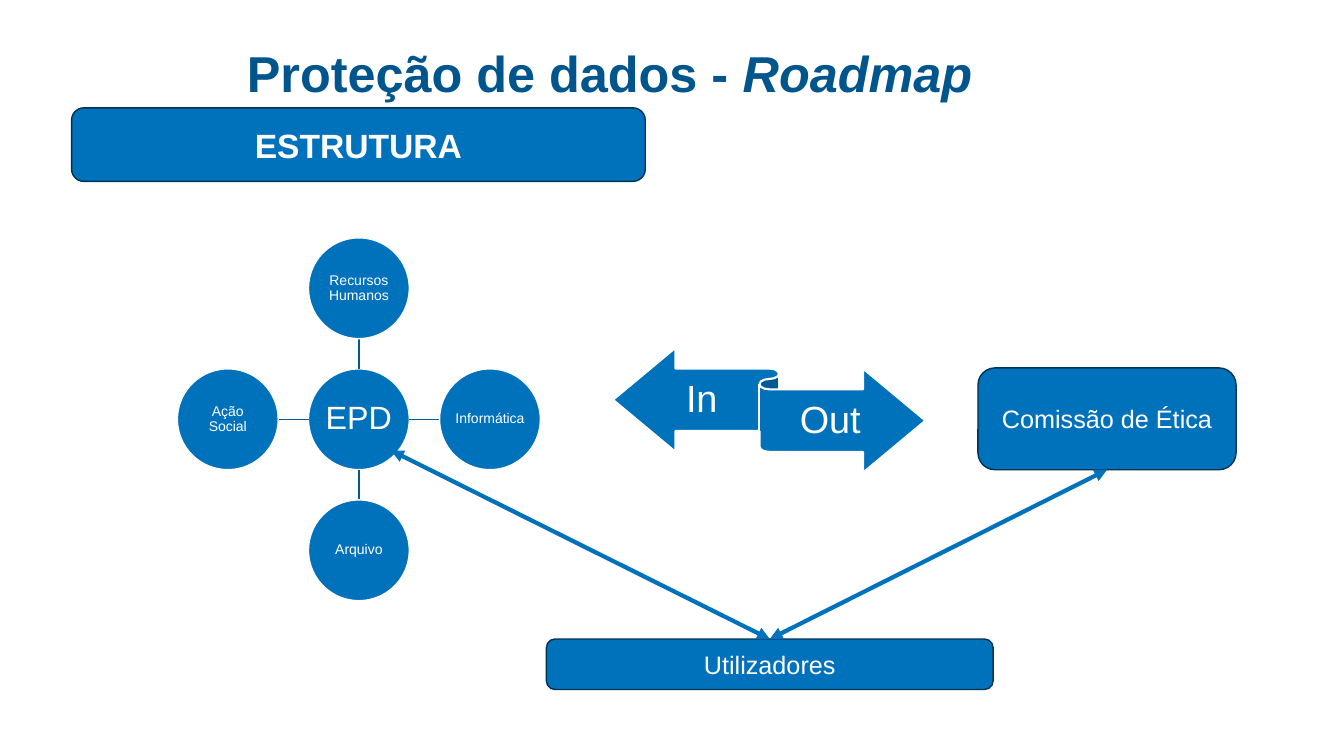
from dataclasses import dataclass

from lxml import etree
from pptx import Presentation
from pptx.dml.color import RGBColor
from pptx.enum import shapes, text
from pptx.oxml import ns
from pptx.util import Inches, Pt


@dataclass(frozen=True)
class Theme:
    font: str = "Arial"
    blue: str = "0071BB"
    title_blue: str = "00558C"
    spoke_blue: str = "005A96"
    outline: str = "003252"
    white: str = "FFFFFF"
    title: int = 36
    heading: int = 24
    body: int = 18
    hub: int = 23
    satellite: int = 10
    ribbon: int = 27


class SlideBuilder:
    def __init__(self, slide, theme):
        self.slide = slide
        self.theme = theme

    def set_text(self, shape, runs, size, color, inset=0.1, spacing=1.0,
                 align=text.PP_ALIGN.CENTER, anchor=text.MSO_ANCHOR.MIDDLE):
        """Fill a shape with one paragraph of (wording, font format) runs."""
        frame = shape.text_frame
        frame_format = {"word_wrap": True, "vertical_anchor": anchor,
                        "margin_left": Inches(inset), "margin_right": Inches(inset),
                        "margin_top": Inches(0), "margin_bottom": Inches(0)}
        for name, value in frame_format.items():
            setattr(frame, name, value)
        paragraph = frame.paragraphs[0]
        paragraph.alignment = align
        paragraph.line_spacing = spacing
        for wording, extra in runs:
            run = paragraph.add_run()
            run.text = wording
            font_format = {"name": self.theme.font, "size": Pt(size), **extra}
            for name, value in font_format.items():
                setattr(run.font, name, value)
            run.font.color.rgb = RGBColor.from_string(color)

    def label(self, box, runs, size, color, **options):
        shape = self.slide.shapes.add_textbox(*map(Inches, box))
        self.set_text(shape, runs, size, color, **options)

    def block(self, kind, box, line, width=1.0):
        shape = self.slide.shapes.add_shape(kind, *map(Inches, box))
        shape.shadow.inherit = False
        shape.fill.solid()
        shape.fill.fore_color.rgb = RGBColor.from_string(self.theme.blue)
        shape.line.color.rgb = RGBColor.from_string(line)
        shape.line.width = Pt(width)
        return shape

    def panel(self, box, wording, size, **font_format):
        shape = self.block(shapes.MSO_SHAPE.ROUNDED_RECTANGLE, box, self.theme.outline)
        self.set_text(shape, [(wording, font_format)], size, self.theme.white)
        return shape

    def circle(self, left, top, diameter, wording, size):
        shape = self.block(shapes.MSO_SHAPE.OVAL, (left, top, diameter, diameter),
                           self.theme.white)
        self.set_text(shape, [(wording, {})], size, self.theme.white, inset=0, spacing=0.9)

    def connector(self, start, end, color, width, arrows=False):
        line = self.slide.shapes.add_connector(
            shapes.MSO_CONNECTOR.STRAIGHT, *map(Inches, (*start, *end)))
        line.line.color.rgb = RGBColor.from_string(color)
        line.line.width = Pt(width)
        properties = line._element.spPr
        if arrows:
            for tag in ("a:headEnd", "a:tailEnd"):
                etree.SubElement(properties.find(ns.qn("a:ln")), ns.qn(tag), type="triangle")
        etree.SubElement(properties, ns.qn("a:effectLst"))
        return line


def main():
    presentation = Presentation()
    presentation.slide_width = Inches(13.33)
    presentation.slide_height = Inches(7.5)
    theme = Theme()
    builder = SlideBuilder(presentation.slides.add_slide(presentation.slide_layouts[6]), theme)

    # Title and section heading
    builder.label((2.35, 0.38, 9.28, 0.65),
                  [("Proteção de dados - ", {"bold": True}),
                   ("Roadmap", {"bold": True, "italic": True})],
                  theme.title, theme.title_blue, spacing=0.9,
                  align=text.PP_ALIGN.LEFT, anchor=text.MSO_ANCHOR.BOTTOM)
    builder.panel((0.71, 1.07, 5.69, 0.73), "ESTRUTURA", theme.heading, bold=True)

    # Hub with four satellites, one pitch away in each direction
    left, top, diameter, pitch = 3.06, 3.66, 1, 1.3
    radius = diameter / 2
    center_x, center_y = left + radius, top + radius
    builder.circle(left, top, diameter, "EPD", theme.hub)
    satellites = [("Recursos Humanos", 0, -1), ("Informática", 1, 0),
                  ("Arquivo", 0, 1), ("Ação Social", -1, 0)]
    for wording, dx, dy in satellites:
        near, far = [(center_x + dx * reach, center_y + dy * reach)
                     for reach in (radius, pitch - radius)]
        builder.connector(near, far, theme.spoke_blue, 1)
        builder.circle(left + dx * pitch, top + dy * pitch, diameter, wording,
                       theme.satellite)

    # Two-way ribbon
    builder.block(shapes.MSO_SHAPE.LEFT_RIGHT_RIBBON, (6.08, 3.45, 3.1, 1.24),
                  theme.white, 1.5)
    for wording, box in (("In", (6.45, 3.67, 1.02, 0.61)),
                         ("Out", (7.63, 3.87, 1.21, 0.61))):
        builder.label(box, [(wording, {})], theme.ribbon, theme.white,
                      inset=0, spacing=0.9)

    # Committee and users, linked to the hub
    committee = builder.panel((9.7, 3.65, 2.56, 1.01), "Comissão de Ética", theme.body)
    users = builder.panel((5.42, 6.34, 4.43, 0.5), "Utilizadores", theme.body)
    users_top = (7.63, 6.34)
    to_hub = builder.connector(users_top, (3.88, 4.47), theme.blue, 3, arrows=True)
    to_committee = builder.connector(users_top, (10.98, 4.66), theme.blue, 3, arrows=True)
    for link in (to_hub, to_committee):
        link.begin_connect(users, 0)
    to_committee.end_connect(committee, 2)

    presentation.save("out.pptx")


if __name__ == "__main__":
    main()
